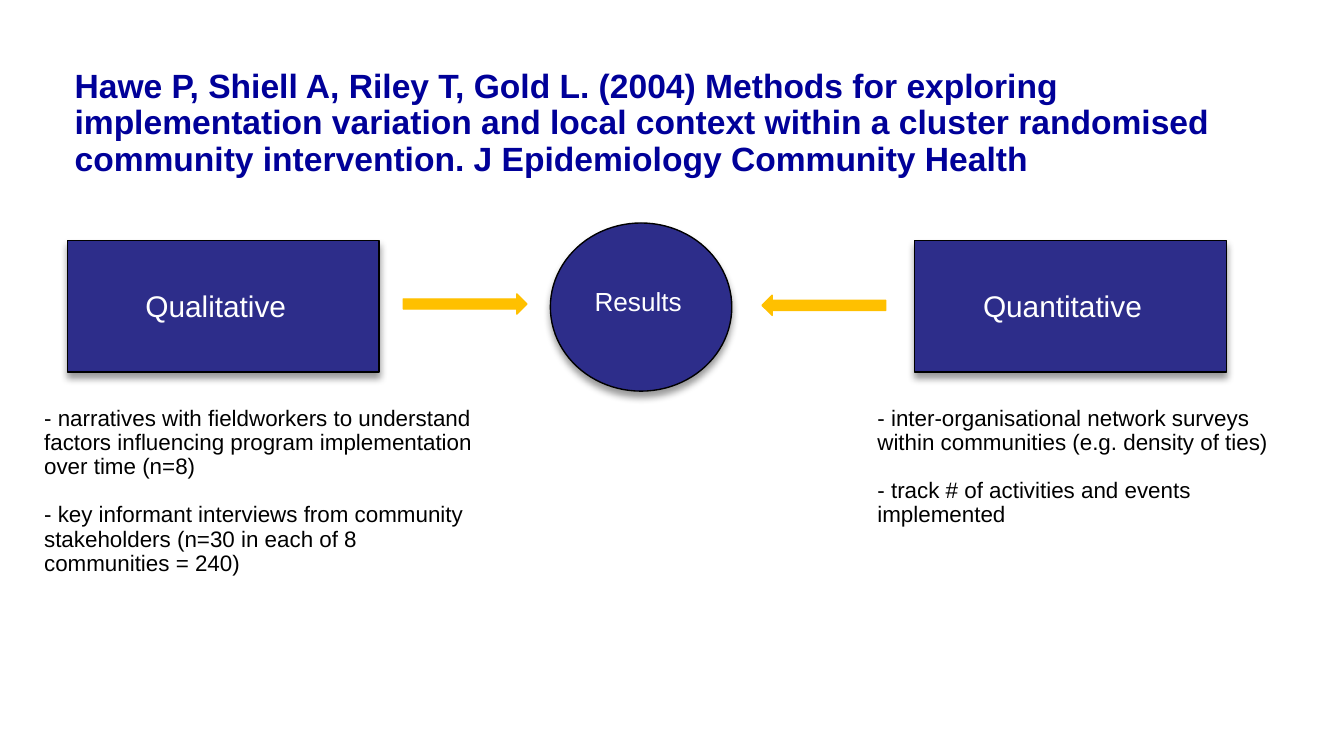
from typing import NamedTuple

from lxml import etree
from pptx import Presentation
from pptx.dml.color import RGBColor
from pptx.enum.shapes import MSO_SHAPE
from pptx.enum.text import MSO_ANCHOR, MSO_AUTO_SIZE, PP_ALIGN
from pptx.oxml.ns import qn
from pptx.util import Inches, Pt

RECTANGLE, OVAL, ARROW = MSO_SHAPE.RECTANGLE, MSO_SHAPE.OVAL, MSO_SHAPE.RIGHT_ARROW
LEFT, CENTER = PP_ALIGN.LEFT, PP_ALIGN.CENTER
TOP = MSO_ANCHOR.TOP
NO_FIT = MSO_AUTO_SIZE.NONE

FONT = "Arial"
TITLE_BLUE = RGBColor(0x00, 0x00, 0x99)
NAVY = RGBColor(0x2D, 0x2D, 0x8A)
AMBER = RGBColor(0xFF, 0xC0, 0x00)
BLACK = RGBColor(0x00, 0x00, 0x00)
WHITE = RGBColor(0xFF, 0xFF, 0xFF)

WIDTH = Inches(10)
HEIGHT = WIDTH * 9 // 16
COLUMN, ROW = WIDTH / 100, HEIGHT / 100


class Area(NamedTuple):
    column: float
    row: float
    columns: float
    rows: float

    def emu(self) -> list[int]:
        units = (COLUMN, ROW, COLUMN, ROW)
        return [round(n * unit) for n, unit in zip(self, units)]


class Node(NamedTuple):
    kind: int
    area: Area
    label: str
    label_area: Area
    size: int
    align: int


class Arrow(NamedTuple):
    area: Area
    rotation: int


class Notes(NamedTuple):
    area: Area
    items: tuple[str, ...]


TITLE = (
    "Hawe P, Shiell A, Riley T, Gold L. (2004) Methods for exploring implementation "
    "variation and local context within a cluster randomised community intervention. "
    "J Epidemiology Community Health"
)
TITLE_AREA = Area(4.55, 8.3, 90.7, 12.63)

NODES = [
    Node(RECTANGLE, Area(5, 31.8, 23.2, 17.44), "Qualitative",
         Area(6.36, 37.15, 19.4, 6.58), 16, CENTER),
    Node(OVAL, Area(40.95, 29.5, 13.5, 22.24), "Results",
         Area(43.25, 36.88, 9.8, 5.52), 14, LEFT),
    Node(RECTANGLE, Area(68.05, 31.8, 23.2, 17.44), "Quantitative",
         Area(69.36, 37.15, 19.4, 6.58), 16, CENTER),
]
ARROWS = [
    Arrow(Area(30, 38.88, 9.2, 2.67), 0),
    Arrow(Area(56.7, 39.05, 9.2, 2.67), 180),
]
NOTES = [
    Notes(Area(2.3, 52.93, 34.1, 24.91), (
        "- narratives with fieldworkers to understand factors influencing program "
        "implementation over time (n=8)",
        "- key informant interviews from community stakeholders (n=30 in each of 8 "
        "communities = 240)",
    )),
    Notes(Area(64.3, 52.93, 31.8, 24.91), (
        "- inter-organisational network surveys within communities (e.g. density of ties)",
        "- track # of activities and events implemented",
    )),
]


def write(sp, paragraphs: tuple[str, ...], size: int, color: RGBColor,
          align: int = LEFT, spacing: float = 1, gap: float = 0,
          bold: bool = False) -> None:
    tf = sp.text_frame
    tf.text = "\n".join(paragraphs)
    tf.word_wrap = True
    tf.auto_size = NO_FIT
    tf.vertical_anchor = TOP
    for i, p in enumerate(tf.paragraphs):
        p.alignment = align
        p.line_spacing = spacing
        p.space_before = Pt(gap if i else 0)
        for r in p.runs:
            r.font.name = FONT
            r.font.size = Pt(size)
            r.font.bold = bold
            r.font.color.rgb = color


def add_filled(s, kind: int, area: Area, fill: RGBColor, line: RGBColor):
    sp = s.shapes.add_shape(kind, *area.emu())
    sp.shadow.inherit = False
    sp.fill.solid()
    sp.fill.fore_color.rgb = fill
    sp.line.color.rgb = line
    sp.line.width = Pt(0.75)
    return sp


def add_shadow(sp) -> None:
    effects = sp.element.spPr.find(qn("a:effectLst"))
    shadow = etree.SubElement(effects, qn("a:outerShdw"), blurRad=str(Pt(4)),
                              dist=str(Pt(3)), dir="5400000", rotWithShape="0")
    color = etree.SubElement(shadow, qn("a:srgbClr"), val=str(BLACK))
    etree.SubElement(color, qn("a:alpha"), val="40000")


def add_node(s, node: Node) -> None:
    add_shadow(add_filled(s, node.kind, node.area, NAVY, BLACK))
    label = s.shapes.add_textbox(*node.label_area.emu())
    write(label, (node.label,), node.size, WHITE, node.align)


def add_arrow(s, arrow: Arrow) -> None:
    sp = add_filled(s, ARROW, arrow.area, AMBER, AMBER)
    sp.rotation = arrow.rotation


def add_notes(s, notes: Notes) -> None:
    sp = s.shapes.add_textbox(*notes.area.emu())
    write(sp, notes.items, 12, BLACK, spacing=0.9, gap=13)


def main() -> None:
    prs = Presentation()
    prs.slide_width, prs.slide_height = WIDTH, HEIGHT
    s = prs.slides.add_slide(prs.slide_layouts.get_by_name("Title Only"))

    title = s.shapes.title
    title.left, title.top, title.width, title.height = TITLE_AREA.emu()
    write(title, (TITLE,), 18, TITLE_BLUE, spacing=0.9, bold=True)

    for node in NODES:
        add_node(s, node)
    for arrow in ARROWS:
        add_arrow(s, arrow)
    for notes in NOTES:
        add_notes(s, notes)

    prs.save("out.pptx")


if __name__ == "__main__":
    main()
